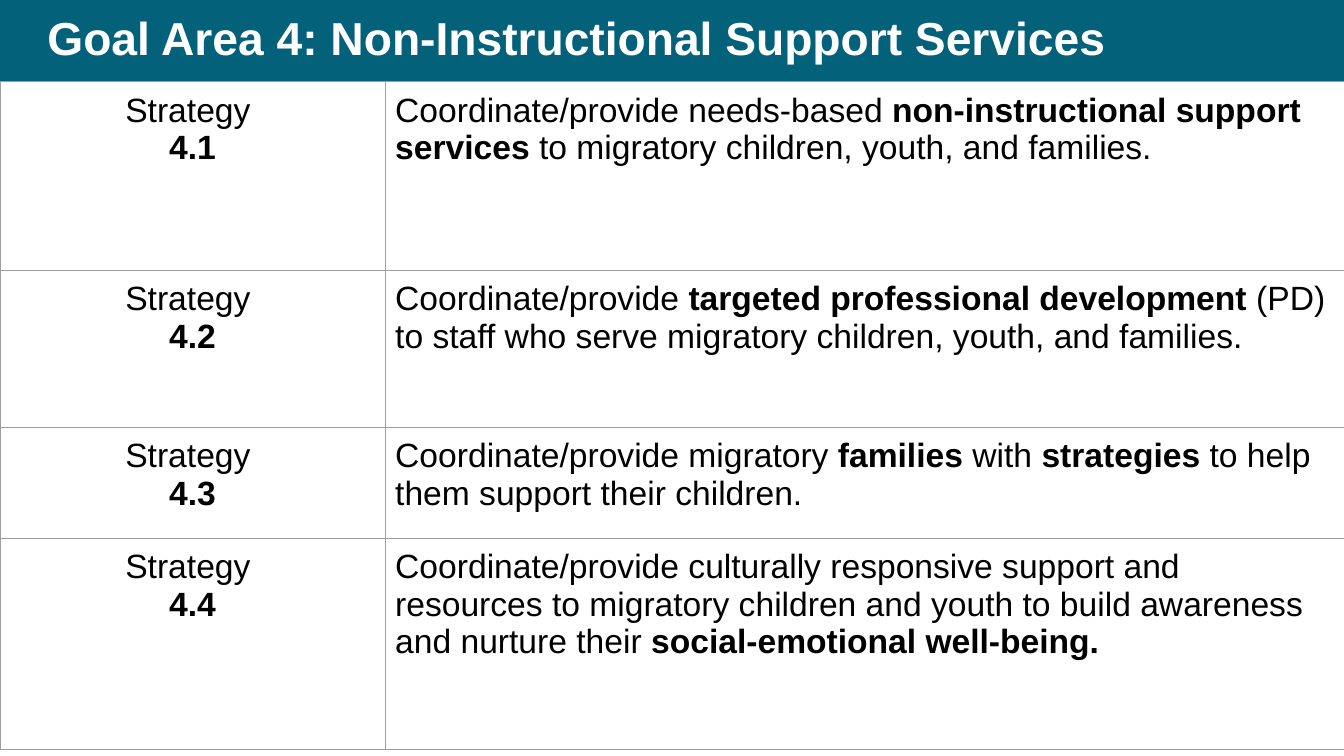
from dataclasses import dataclass

from lxml.etree import SubElement
from pptx import Presentation
from pptx.dml.color import RGBColor
from pptx.enum.shapes import MSO_SHAPE
from pptx.enum.text import MSO_ANCHOR, MSO_AUTO_SIZE, PP_ALIGN
from pptx.oxml.ns import qn
from pptx.util import Inches, Pt


@dataclass(frozen=True)
class Theme:
    font: str = "Arial"
    title_size: float = 33
    body_size: float = 24
    band: str = "03617A"
    title: str = "FFFFFF"
    body: str = "000000"
    border: str = "9E9E9E"
    border_width: float = 0.75


THEME = Theme()
WIDTH, HEIGHT = Inches(13.33), Inches(7.5)
BAND_HEIGHT = Inches(0.81)
COLUMNS = [Inches(3.82), Inches(9.51)]
ROWS = [Inches(1.87), Inches(1.56), Inches(1.1), Inches(2.1)]
TITLE = "Goal Area 4: Non-Instructional Support Services"
STRATEGIES = [
    "Coordinate/provide needs-based **non-instructional support services** "
    "to migratory children, youth, and families.",
    "Coordinate/provide **targeted professional development** (PD) "
    "to staff who serve migratory children, youth, and families.",
    "Coordinate/provide migratory **families **with **strategies **"
    "to help them support their children.",
    "Coordinate/provide culturally responsive support and resources to migratory "
    "children and youth to build awareness and nurture their "
    "**social-emotional well-being.**",
]


def write(p, text, size=THEME.body_size, color=THEME.body, align=PP_ALIGN.LEFT):
    p.alignment = align
    for i, part in enumerate(text.split("**")):
        for j, line in enumerate(part.split("\n")):
            if j:
                p.add_line_break()
            if line:
                r = p.add_run()
                r.text = line
                r.font.name = THEME.font
                r.font.size = Pt(size)
                r.font.bold = i % 2 == 1
                r.font.color.rgb = RGBColor.from_string(color)


def add_band(s):
    sp = s.shapes.add_shape(MSO_SHAPE.RECTANGLE, 0, 0, WIDTH, BAND_HEIGHT)
    sp.shadow.inherit = False
    sp.fill.solid()
    sp.fill.fore_color.rgb = RGBColor.from_string(THEME.band)
    sp.line.fill.background()
    s.shapes._spTree.insert(2, sp._element)


def add_title(s, text):
    sp = s.shapes.title
    sp.left, sp.top = Inches(0.37), 0
    sp.width, sp.height = Inches(12.32), BAND_HEIGHT
    tf = sp.text_frame
    tf.word_wrap = True
    tf.auto_size = MSO_AUTO_SIZE.NONE
    tf.vertical_anchor = MSO_ANCHOR.MIDDLE
    p = tf.paragraphs[0]
    p.line_spacing = 0.9
    write(p, f"**{text}**", size=THEME.title_size, color=THEME.title)


def add_borders(cell):
    tcPr = cell._tc.get_or_add_tcPr()
    for side in ("a:lnL", "a:lnR", "a:lnT", "a:lnB"):
        ln = SubElement(tcPr, qn(side), w=str(Pt(THEME.border_width)))
        fill = SubElement(ln, qn("a:solidFill"))
        SubElement(fill, qn("a:srgbClr"), val=THEME.border)


def fill_cell(cell, text, align=PP_ALIGN.LEFT):
    cell.margin_left = cell.margin_right = Inches(0.1)
    cell.margin_top = cell.margin_bottom = Inches(0.1)
    add_borders(cell)
    cell.fill.background()
    write(cell.text_frame.paragraphs[0], text, align=align)


def add_strategies(s):
    frame = s.shapes.add_table(
        len(ROWS), len(COLUMNS), 0, BAND_HEIGHT, sum(COLUMNS), sum(ROWS))
    table = frame.table
    table.first_row = table.horz_banding = False
    for column, width in zip(table.columns, COLUMNS):
        column.width = width
    for i, (height, text) in enumerate(zip(ROWS, STRATEGIES)):
        table.rows[i].height = height
        fill_cell(table.cell(i, 0), f"Strategy \n**4.{i + 1}**", PP_ALIGN.CENTER)
        fill_cell(table.cell(i, 1), text)


def main():
    prs = Presentation()
    prs.slide_width, prs.slide_height = WIDTH, HEIGHT
    s = prs.slides.add_slide(prs.slide_layouts[5])
    add_band(s)
    add_strategies(s)
    add_title(s, TITLE)
    prs.save("out.pptx")


if __name__ == "__main__":
    main()
